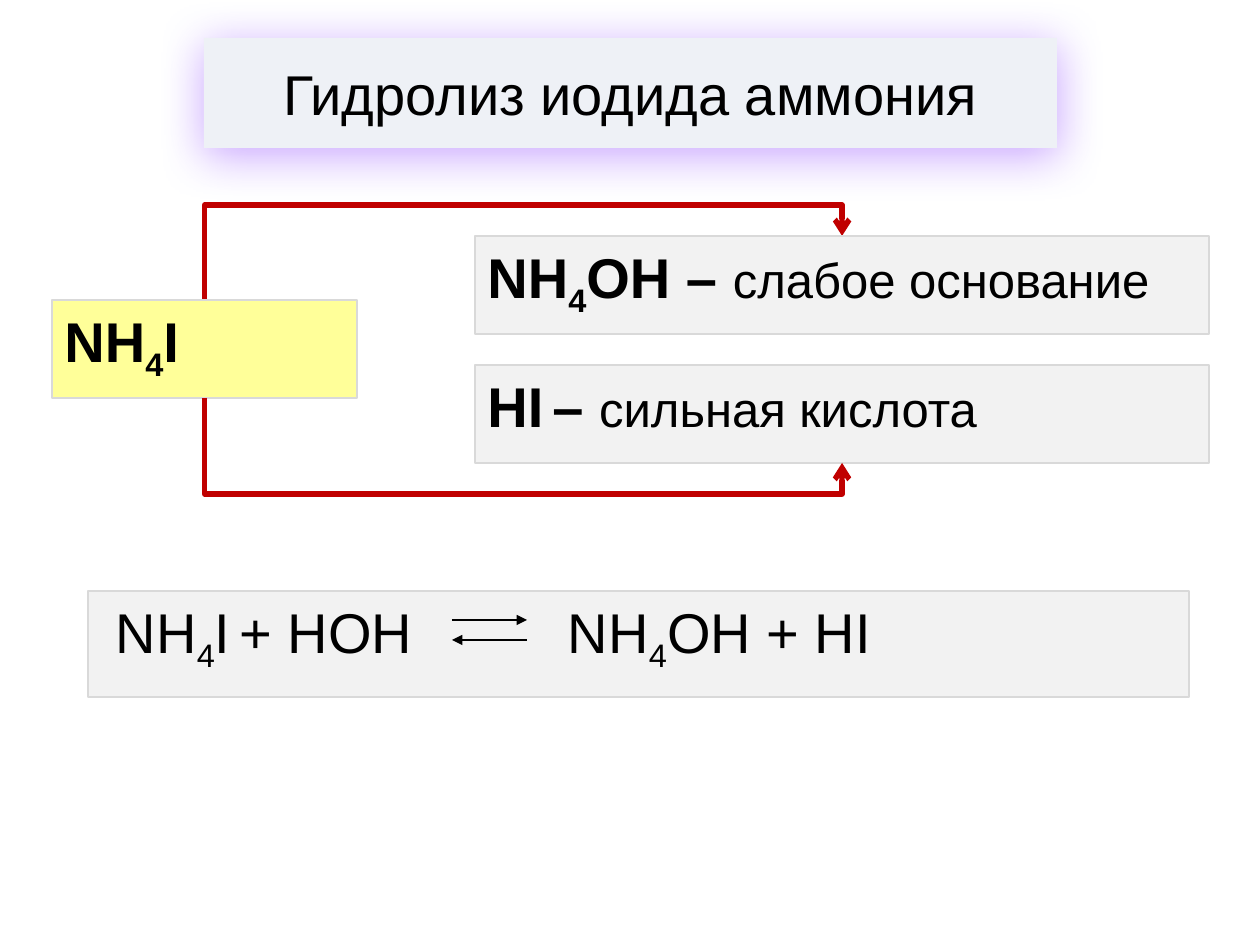
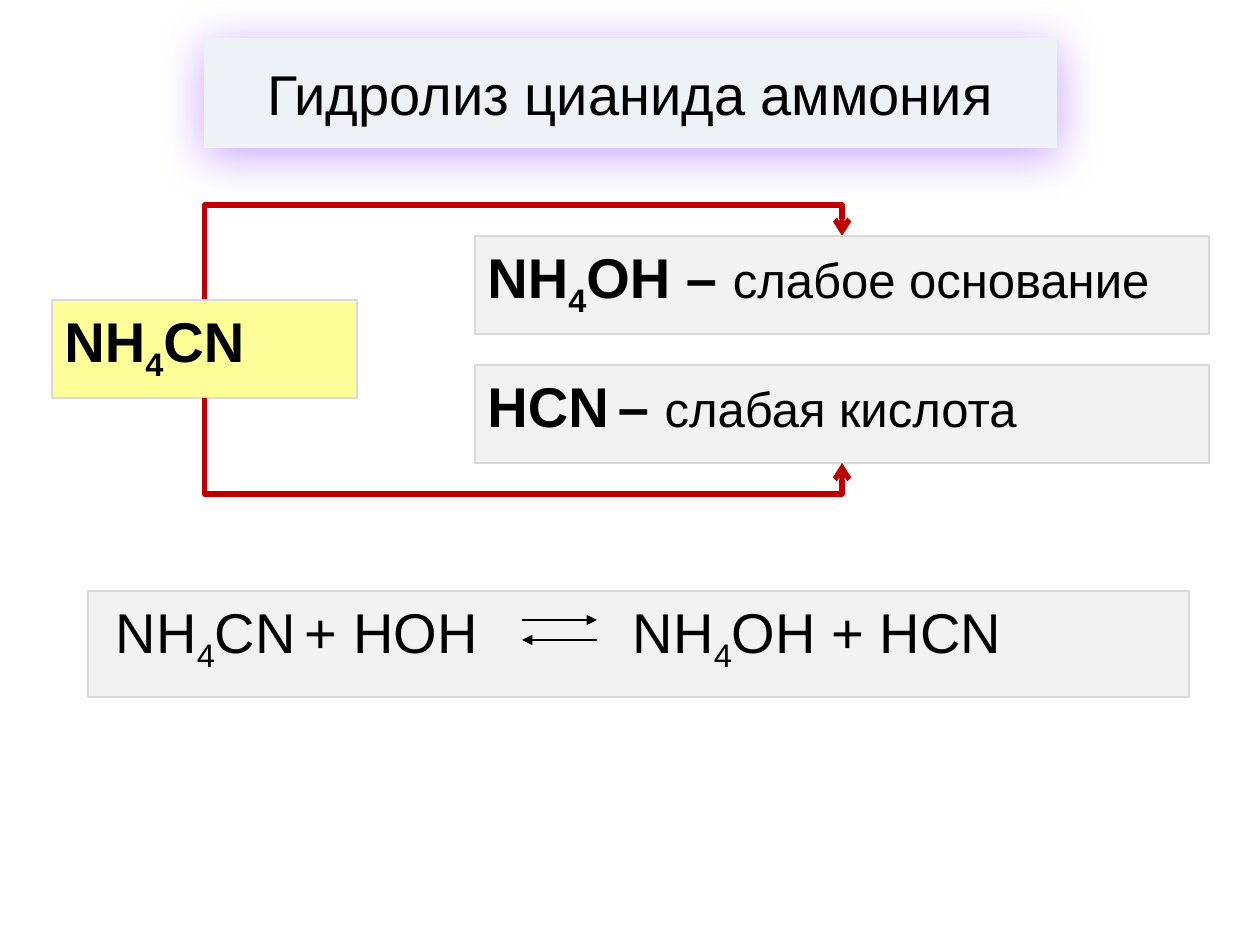
from collections import namedtuple

from lxml.etree import SubElement
from pptx import Presentation
from pptx.dml.color import RGBColor
from pptx.enum.shapes import MSO_CONNECTOR as Connector, MSO_SHAPE as Preset
from pptx.enum.text import MSO_ANCHOR as Anchor, PP_ALIGN as Align
from pptx.oxml.ns import qn
from pptx.util import Pt

PX = 914400 / 126

BLACK = RGBColor(0x00, 0x00, 0x00)
TITLE_FILL = RGBColor(0xEE, 0xF1, 0xF6)
TITLE_GLOW = RGBColor(0x66, 0x00, 0xFF)
SALT_FILL = RGBColor(0xFF, 0xFF, 0x99)
PANEL_FILL = RGBColor(0xF2, 0xF2, 0xF2)
PANEL_LINE = RGBColor(0xD9, 0xD9, 0xD9)
ARROW_RED = RGBColor(0xC0, 0x00, 0x00)

FONT = "Arial"
FORMULA_SIZE = Pt(32)
ROLE_SIZE = Pt(28)

Box = namedtuple("Box", "left top width height")
Salt = namedtuple("Salt", "title formula acid acid_role reagents products arrows_left products_left")

TITLE_BOX = Box(204, 38, 853, 110)
SCHEME_BOX = Box(52, 205, 1157, 289)
EQUATION_BOX = Box(88, 591, 1101, 106)

SALTS = [
    Salt("Гидролиз иодида аммония", "NH_4_I", "HI", "сильная кислота",
         "NH_4_I_ _+ HOH", "NH_4_OH + HI", 364, 452),
    Salt("Гидролиз цианида аммония", "NH_4_CN", "HCN", "слабая кислота",
         "NH_4_CN_ _+ HOH", "NH_4_OH + HCN", 434, 517),
]


def px(length):
    return round(length * PX)


def format_paragraph(paragraph, alignment):
    paragraph.alignment = alignment
    paragraph.font.name = FONT
    paragraph.font.size = FORMULA_SIZE
    paragraph.font.color.rgb = BLACK


def add_formula(paragraph, formula, bold):
    paragraph.font.bold = bold
    for index, part in enumerate(formula.split("_")):
        run = paragraph.add_run()
        run.text = part
        if index % 2:
            run.font._element.set("baseline", "-25000")


def add_panel(shapes, box, fill):
    panel = shapes.add_shape(Preset.RECTANGLE, *map(px, box))
    panel.shadow.inherit = False
    panel.fill.solid()
    panel.fill.fore_color.rgb = fill
    panel.line.color.rgb = PANEL_LINE
    panel.line.width = Pt(0.75)
    frame = panel.text_frame
    frame.word_wrap = True
    frame.vertical_anchor = Anchor.TOP
    paragraph = frame.paragraphs[0]
    format_paragraph(paragraph, Align.LEFT)
    return frame, paragraph


def add_arrow(shapes, kind, ends, color, width, head):
    arrow = shapes.add_connector(kind, *map(px, ends))
    arrow.line.color.rgb = color
    arrow.line.width = Pt(width)
    properties = arrow._element.spPr
    SubElement(properties.find(qn("a:ln")), qn("a:tailEnd"), type=head)
    SubElement(properties, qn("a:effectLst"))
    return properties


def add_bent_arrow(shapes, start, end, rail):
    (start_x, start_y), (end_x, end_y) = start, end
    center_x, center_y = (start_x + end_x) / 2, (start_y + end_y) / 2
    half_width, half_height = abs(end_y - start_y) / 2, (end_x - start_x) / 2
    upward = end_y < start_y
    side = half_height if upward else -half_height
    ends = (center_x + half_width, center_y + side,
            center_x - half_width, center_y - side)
    properties = add_arrow(shapes, Connector.ELBOW, ends, ARROW_RED, 3, "arrow")
    properties.find(qn("a:xfrm")).set("rot", str((90 if upward else 270) * 60000))
    geometry = properties.find(qn("a:prstGeom"))
    guides = geometry.find(qn("a:avLst"))
    if guides is None:
        guides = SubElement(geometry, qn("a:avLst"))
    bend = round((rail - start_y) / (end_y - start_y) * 100000)
    SubElement(guides, qn("a:gd"), name="adj1", fmla=f"val {bend}")


def add_title(slide, box, text):
    title = slide.shapes.title
    title.left, title.top, title.width, title.height = map(px, box)
    title.fill.solid()
    title.fill.fore_color.rgb = TITLE_FILL
    title.text_frame.text = text
    title.text_frame.vertical_anchor = Anchor.MIDDLE
    format_paragraph(title.text_frame.paragraphs[0], Align.CENTER)
    effects = SubElement(title._element.spPr, qn("a:effectLst"))
    shadow = SubElement(effects, qn("a:outerShdw"), blurRad=str(Pt(27)),
                        dist=str(Pt(4)), dir="5400000", algn="ctr", rotWithShape="0")
    color = SubElement(shadow, qn("a:srgbClr"), val=str(TITLE_GLOW))
    SubElement(color, qn("a:alpha"), val="35000")


def add_scheme(slide, box, salt):
    shapes = slide.shapes.add_group_shape().shapes
    panel_height, rail_gap = 98, 31
    bottom = box.top + box.height
    salt_box = Box(box.left, box.top + (box.height - panel_height) // 2, 305, panel_height)
    base_box = Box(box.left + 423, box.top + rail_gap, box.width - 423, panel_height)
    acid_box = base_box._replace(top=bottom - rail_gap - panel_height)
    salt_x = salt_box.left + salt_box.width / 2
    product_x = base_box.left + base_box.width / 2

    add_bent_arrow(shapes, (salt_x, salt_box.top), (product_x, base_box.top), box.top)
    _, paragraph = add_panel(shapes, salt_box, SALT_FILL)
    add_formula(paragraph, salt.formula, True)
    for product_box, formula, role in (
        (base_box, "NH_4_OH – ", "слабое основание"),
        (acid_box, f"{salt.acid}_ _– ", salt.acid_role),
    ):
        _, paragraph = add_panel(shapes, product_box, PANEL_FILL)
        add_formula(paragraph, formula, True)
        run = paragraph.add_run()
        run.text = role
        run.font.size = ROLE_SIZE
        run.font.bold = False
    add_bent_arrow(shapes, (salt_x, salt_box.top + panel_height),
                   (product_x, acid_box.top + panel_height), bottom)


def add_equation(slide, box, salt):
    frame, paragraph = add_panel(slide.shapes, box, PANEL_FILL)
    frame.margin_left = px(28)
    tabs = SubElement(paragraph._p.get_or_add_pPr(), qn("a:tabLst"))
    SubElement(tabs, qn("a:tab"), pos=str(px(salt.products_left)), algn="l")
    add_formula(paragraph, f"{salt.reagents}\t{salt.products}", False)

    shapes = slide.shapes.add_group_shape().shapes
    left = box.left + salt.arrows_left
    right = left + 75
    for start_x, end_x, offset in ((left, right, 29), (right, left, 49)):
        y = box.top + offset
        add_arrow(shapes, Connector.STRAIGHT, (start_x, y, end_x, y), BLACK, 1.5, "triangle")


def add_hydrolysis_slide(presentation, salt):
    slide = presentation.slides.add_slide(presentation.slide_layouts.get_by_name("Title Only"))
    add_title(slide, TITLE_BOX, salt.title)
    add_scheme(slide, SCHEME_BOX, salt)
    add_equation(slide, EQUATION_BOX, salt)


def main():
    presentation = Presentation()
    presentation.slide_width = px(1260)
    presentation.slide_height = px(945)
    for salt in SALTS:
        add_hydrolysis_slide(presentation, salt)
    presentation.save("out.pptx")


if __name__ == "__main__":
    main()
